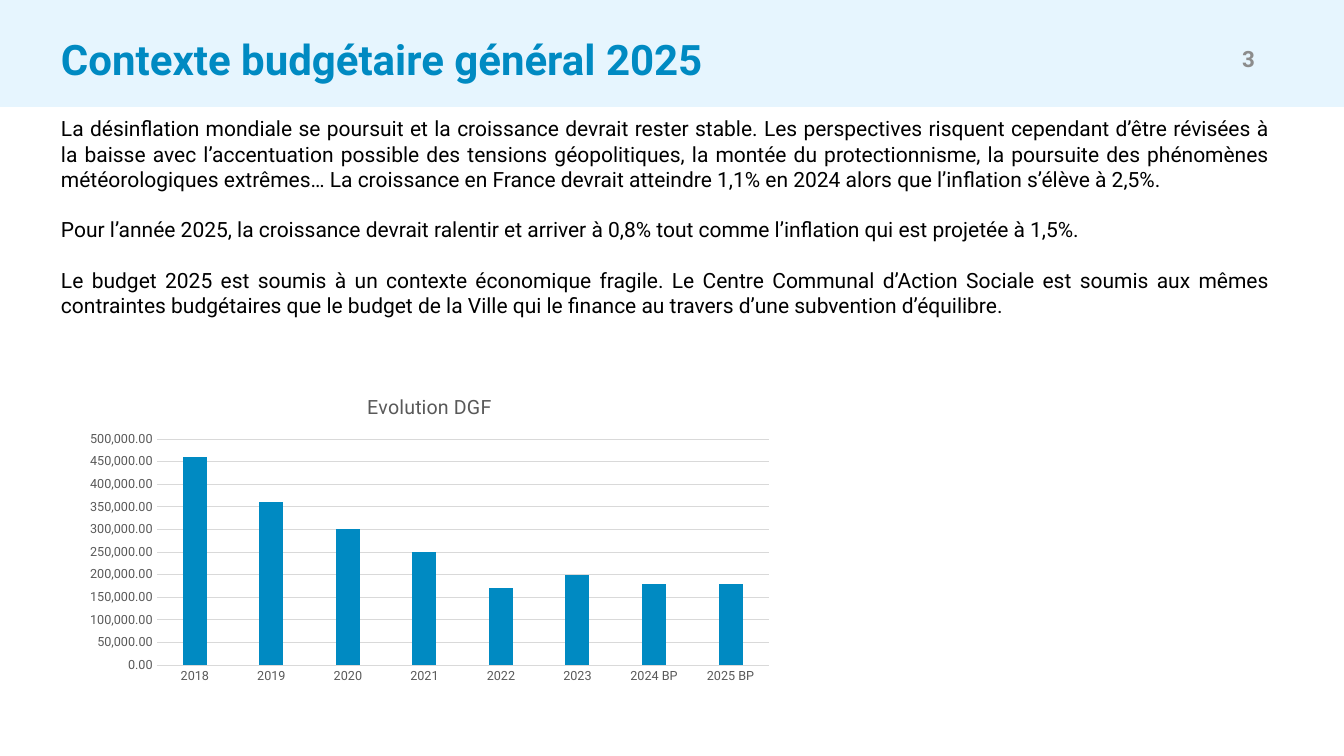
from dataclasses import dataclass

from lxml import etree
from pptx import Presentation
from pptx.chart.data import CategoryChartData
from pptx.dml.color import RGBColor
from pptx.enum.chart import XL_CHART_TYPE, XL_TICK_MARK
from pptx.enum.shapes import MSO_SHAPE
from pptx.enum.text import MSO_ANCHOR, MSO_AUTO_SIZE, PP_ALIGN
from pptx.oxml.ns import qn
from pptx.util import Pt

EMU_PER_PX = 914400 / 100.8
PAGE_WIDTH, PAGE_HEIGHT = 1344, 756
TITLE_AND_CONTENT = 1
COLUMNS = XL_CHART_TYPE.COLUMN_CLUSTERED
NO_TICK = XL_TICK_MARK.NONE
RECTANGLE = MSO_SHAPE.RECTANGLE
TOP, MIDDLE = MSO_ANCHOR.TOP, MSO_ANCHOR.MIDDLE
NO_AUTOFIT = MSO_AUTO_SIZE.NONE
LEFT, RIGHT, JUSTIFY = PP_ALIGN.LEFT, PP_ALIGN.RIGHT, PP_ALIGN.JUSTIFY


@dataclass(frozen=True)
class Theme:
    font: str = "Roboto"
    accent: str = "008AC2"
    band: str = "E6F5FE"
    text: str = "000000"
    page_number: str = "8C8C8C"
    chart_text: str = "595959"
    grid: str = "D9D9D9"
    title_size: int = 30
    number_size: int = 16
    body_size: int = 15
    chart_title_size: int = 14
    chart_size: int = 10
    axis_size: int = 9
    paragraph_gap: int = 18


CONTEXT = [
    "La désinflation mondiale se poursuit et la croissance devrait rester stable. "
    "Les perspectives risquent cependant d’être révisées à la baisse avec "
    "l’accentuation possible des tensions géopolitiques, la montée du "
    "protectionnisme, la poursuite des phénomènes météorologiques extrêmes… "
    "La croissance en France devrait atteindre 1,1% en 2024 alors que "
    "l’inflation s’élève à 2,5%.",
    "Pour l’année 2025, la croissance devrait ralentir et arriver à 0,8% tout "
    "comme l’inflation qui est projetée à 1,5%.",
    "Le budget 2025 est soumis à un contexte économique fragile. Le Centre "
    "Communal d’Action Sociale est soumis aux mêmes contraintes budgétaires que "
    "le budget de la Ville qui le finance au travers d’une subvention d’équilibre.",
]
DGF_BY_YEAR = {
    "2018": 460000,
    "2019": 360000,
    "2020": 300000,
    "2021": 250000,
    "2022": 170000,
    "2023": 200000,
    "2024 BP": 180000,
    "2025 BP": 180000,
}


def px(*lengths):
    return [round(length * EMU_PER_PX) for length in lengths]


def rgb(colour):
    return RGBColor.from_string(colour)


class SlideBuilder:
    def __init__(self, slide, theme):
        self.slide = slide
        self.theme = theme

    def style(self, font, size, colour, bold=False):
        font.name = self.theme.font
        font.size = Pt(size)
        font.color.rgb = rgb(colour)
        font.bold = bold

    def place(self, shape, box):
        shape.left, shape.top, shape.width, shape.height = px(*box)

    def frame(self, shape, anchor, side_inset, end_inset):
        frame = shape.text_frame
        frame.word_wrap = True
        frame.auto_size = NO_AUTOFIT
        frame.vertical_anchor = anchor
        frame.margin_left, frame.margin_right = px(side_inset, side_inset)
        frame.margin_top, frame.margin_bottom = px(end_inset, end_inset)
        return frame

    def band(self, *box):
        """Add a plain strip behind everything else."""
        strip = self.slide.shapes.add_shape(RECTANGLE, *px(*box))
        strip.shadow.inherit = False
        strip.fill.solid()
        strip.fill.fore_color.rgb = rgb(self.theme.band)
        strip.line.fill.background()
        strip.element.getparent().insert(2, strip.element)

    def title(self, text, *box):
        heading = self.slide.shapes.title
        self.place(heading, box)
        paragraph = self.frame(heading, MIDDLE, 4, 0).paragraphs[0]
        paragraph.text = text
        paragraph.alignment = LEFT
        self.style(paragraph.font, self.theme.title_size, self.theme.accent, True)

    def body(self, texts, *box):
        """Fill the body placeholder with justified, unbulleted paragraphs."""
        body = self.slide.placeholders[1]
        self.place(body, box)
        frame = self.frame(body, TOP, 4, 0)
        frame.text = "\n".join(texts)
        for paragraph in frame.paragraphs:
            paragraph.alignment = JUSTIFY
            paragraph.space_before = Pt(self.theme.paragraph_gap)
            self.style(paragraph.font, self.theme.body_size, self.theme.text)
            properties = paragraph.font._element.getparent()
            properties.set("marL", "0")
            properties.set("indent", "0")
            no_bullet = etree.Element(qn("a:buNone"))
            properties.find(qn("a:defRPr")).addprevious(no_bullet)

    def page_number(self, text, *box):
        number = self.slide.shapes.add_textbox(*px(*box))
        paragraph = self.frame(number, MIDDLE, 10, 5).paragraphs[0]
        paragraph.text = text
        paragraph.alignment = RIGHT
        self.style(paragraph.font, self.theme.number_size, self.theme.page_number, True)

    def column_chart(self, title, values, *box):
        theme = self.theme
        data = CategoryChartData(number_format="#,##0.00")
        data.categories = values.keys()
        data.add_series(title, values.values())
        chart = self.slide.shapes.add_chart(COLUMNS, *px(*box), data).chart
        self.style(chart.font, theme.chart_size, theme.text)
        chart.has_legend = False
        chart.has_title = True
        heading = chart.chart_title.text_frame.paragraphs[0]
        heading.text = title
        self.style(heading.font, theme.chart_title_size, theme.chart_text)

        plot = chart.plots[0]
        plot.vary_by_categories = False
        plot.gap_width, plot.overlap = 219, -27
        columns = plot.series[0].format.fill
        columns.solid()
        columns.fore_color.rgb = rgb(theme.accent)

        years, amounts = chart.category_axis, chart.value_axis
        for axis in (years, amounts):
            axis.major_tick_mark = axis.minor_tick_mark = NO_TICK
            self.style(axis.tick_labels.font, theme.axis_size, theme.chart_text)
        amounts.minimum_scale, amounts.maximum_scale = 0, 500000
        amounts.major_unit = 50000
        amounts.tick_labels.number_format = "#,##0.00"
        amounts.tick_labels.number_format_is_linked = False
        amounts.format.line.fill.background()
        for line in (years.format.line, amounts.major_gridlines.format.line):
            line.color.rgb = rgb(theme.grid)
            line.width = Pt(0.75)


def main():
    deck = Presentation()
    deck.slide_width, deck.slide_height = px(PAGE_WIDTH, PAGE_HEIGHT)
    slide = deck.slides.add_slide(deck.slide_layouts[TITLE_AND_CONTENT])
    page = SlideBuilder(slide, Theme())
    page.band(0, 0, PAGE_WIDTH, 107)
    page.body(CONTEXT, 57, 116, 1217, 262)
    page.title("Contexte budgétaire général 2025", 57, 34, 1230, 50)
    page.page_number("3", 1188, 39, 77, 40)
    page.column_chart("Evolution DGF", DGF_BY_YEAR, 76, 378, 707, 312)
    deck.save("out.pptx")


if __name__ == "__main__":
    main()
